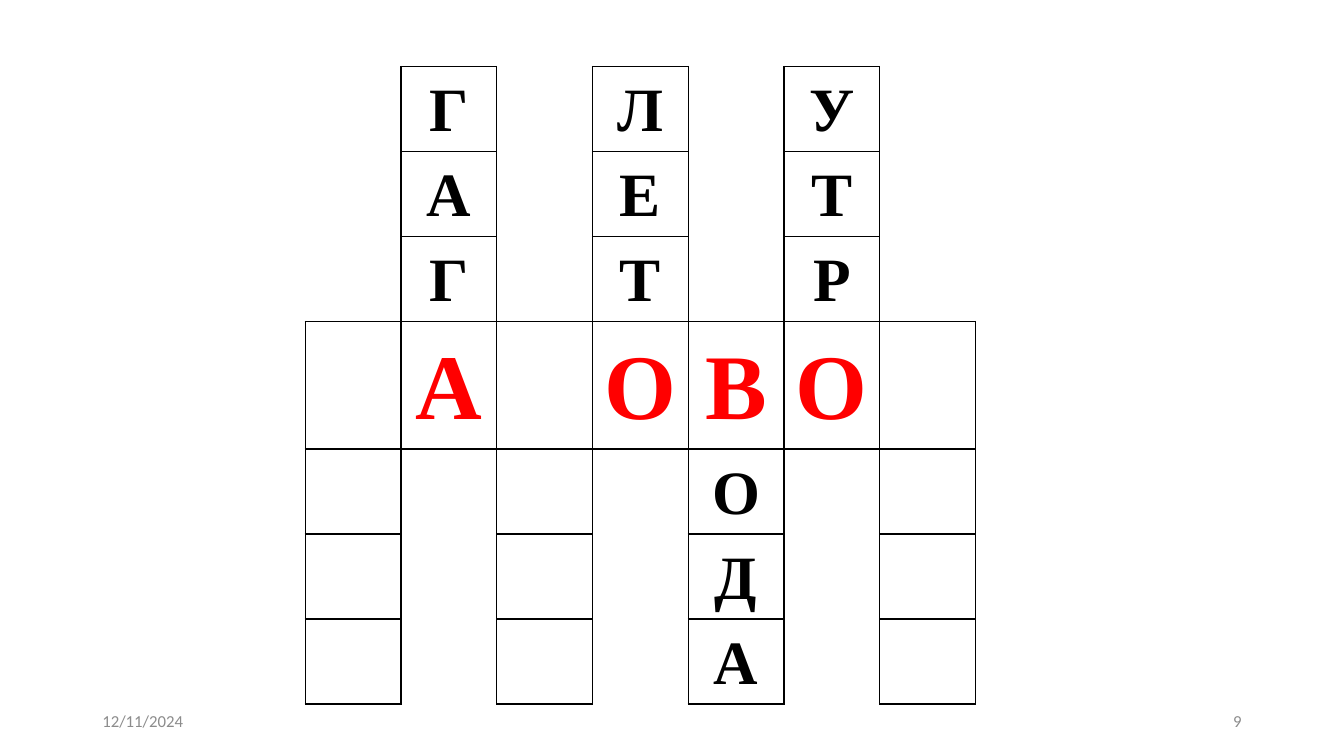
from lxml.etree import SubElement
from pptx import Presentation
from pptx.dml.color import RGBColor
from pptx.enum.text import MSO_ANCHOR, PP_ALIGN
from pptx.oxml.ns import qn
from pptx.util import Pt

GRID = [
    ".Г.Л.У.",
    ".А.Е.Т.",
    ".Г.Т.Р.",
    "_А_ОВО_",
    "_._.О._",
    "_._.Д._",
    "_._.А._",
]
FOOT = [("12/11/2024", 66, PP_ALIGN.LEFT), ("9", 678, PP_ALIGN.RIGHT)]

BLACK = RGBColor(0, 0, 0)
RED = RGBColor(255, 0, 0)
GRAY = RGBColor(0x8C, 0x8C, 0x8C)

LEFT, TOP, WIDE = 218, 47.5, 68.4
KEY, HIGH, TALL = 3, 55.95, 84
SIDES = {"lnL": (0, -1), "lnR": (0, 1), "lnT": (-1, 0), "lnB": (1, 0)}


def write(frame, text, size, color, font="Calibri", bold=False,
          align=PP_ALIGN.LEFT, space=1.0):
    para = frame.paragraphs[0]
    para.alignment = align
    para.line_spacing = space
    run = para.add_run()
    run.text = text
    run.font.size = Pt(size)
    run.font.name = font
    run.font.bold = bold
    run.font.color.rgb = color


def is_box(row, col):
    inside = 0 <= row < len(GRID) and 0 <= col < len(GRID[0])
    return inside and GRID[row][col] != "."


def edge(cell, row, col):
    props = cell._tc.get_or_add_tcPr()
    for side, (down, over) in SIDES.items():
        line = SubElement(props, qn("a:" + side), w=str(Pt(1)))
        if is_box(row, col) or is_box(row + down, col + over):
            fill = SubElement(line, qn("a:solidFill"))
            SubElement(fill, qn("a:srgbClr"), val=str(BLACK))
        else:
            SubElement(line, qn("a:noFill"))


deck = Presentation()
deck.slide_width, deck.slide_height = Pt(960), Pt(540)
slide = deck.slides.add_slide(deck.slide_layouts[6])

for text, left, align in FOOT:
    box = slide.shapes.add_textbox(Pt(left), Pt(500.5), Pt(216), Pt(28.75))
    box.text_frame.word_wrap = True
    box.text_frame.vertical_anchor = MSO_ANCHOR.MIDDLE
    write(box.text_frame, text, 12, GRAY, align=align)

rows, cols = len(GRID), len(GRID[0])
table = slide.shapes.add_table(
    rows, cols, Pt(LEFT), Pt(TOP), Pt(WIDE * cols),
    Pt(HIGH * (rows - 1) + TALL)).table
table.first_row = table.horz_banding = False
style = table._tbl.tblPr.find(qn("a:tableStyleId"))
style.text = "{2D5ABB26-0587-4C30-8999-92F81FD0307C}"

for col in table.columns:
    col.width = Pt(WIDE)
for row, marks in enumerate(GRID):
    table.rows[row].height = Pt(TALL if row == KEY else HIGH)
    for col, mark in enumerate(marks):
        cell = table.cell(row, col)
        edge(cell, row, col)
        cell.fill.background()
        cell.margin_left = cell.margin_right = Pt(5)
        cell.margin_top = cell.margin_bottom = 0
        if mark not in "._":
            size, color = (66, RED) if row == KEY else (44, BLACK)
            write(cell.text_frame, mark, size, color, font="Times New Roman",
                  bold=True, align=PP_ALIGN.CENTER, space=1.15)

for first in (0, KEY + 1):
    for col in range(cols):
        if not is_box(first, col):
            table.cell(first, col).merge(table.cell(first + 2, col))

deck.save("out.pptx")
